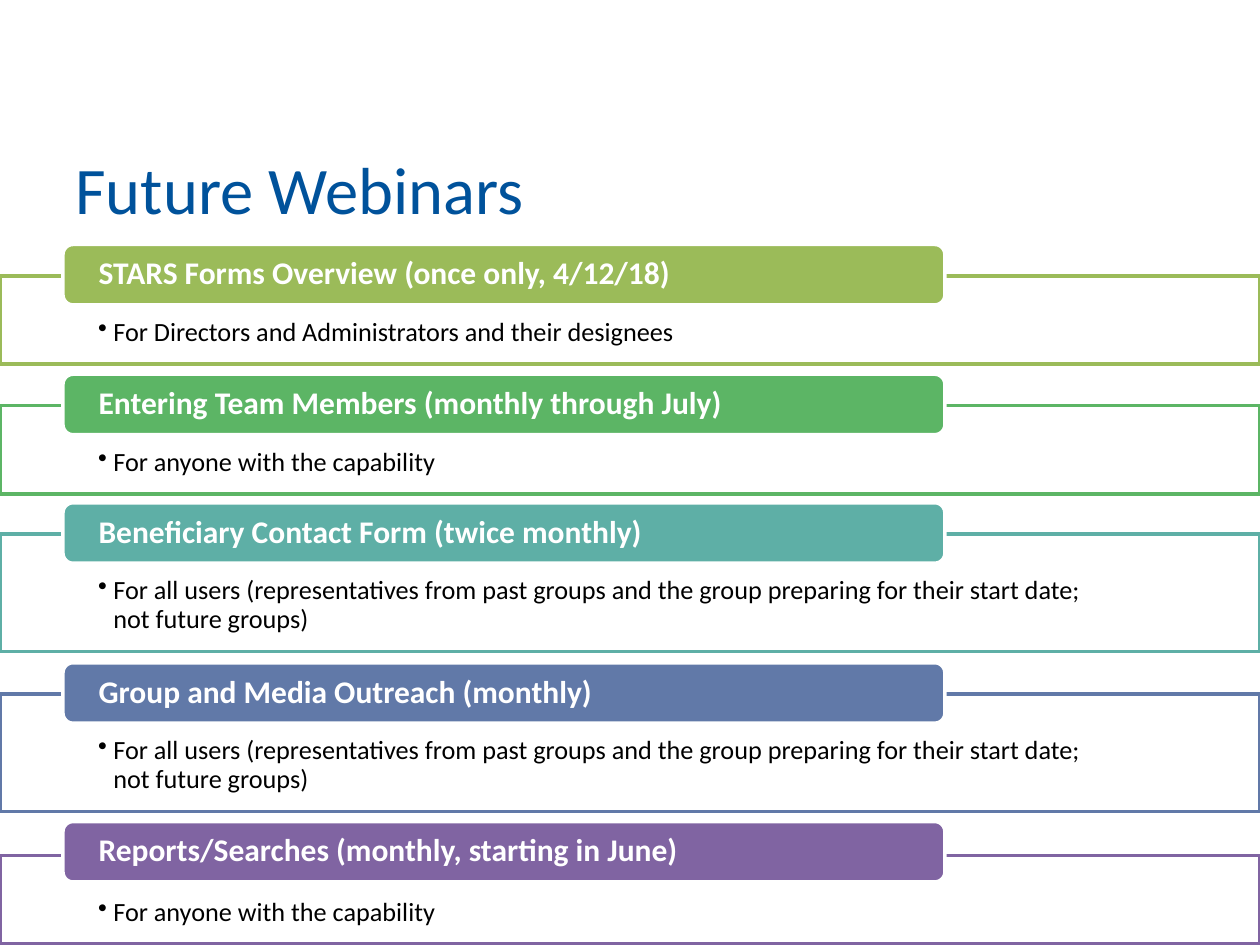
from dataclasses import dataclass

from lxml.etree import SubElement
from pptx import Presentation
from pptx.dml.color import RGBColor
from pptx.enum.shapes import MSO_SHAPE
from pptx.enum.text import MSO_ANCHOR, PP_ALIGN
from pptx.oxml.ns import qn
from pptx.shapes.autoshape import Shape
from pptx.slide import Slide
from pptx.util import Inches, Pt

COLORS = {
    "title": "00529B",
    "text": "000000",
    "white": "FFFFFF",
    "olive": "9BBB59",
    "green": "5CB565",
    "teal": "5EAFA6",
    "blue": "6179A8",
    "purple": "8064A2",
}
FONT = "Calibri"
ONE_LINE, TWO_LINES = 0.7, 0.93  # panel heights
ANYONE = "For anyone with the capability"
ALL_USERS = (
    "For all users (representatives from past groups and the group "
    "preparing for their start date; \nnot future groups)"
)


@dataclass
class Webinar:
    heading: str
    audience: str
    color: str
    top: float
    height: float = ONE_LINE
    tab_rise: float = 0.25


WEBINARS = [
    Webinar("STARS Forms Overview (once only, 4/12/18)",
            "For Directors and Administrators and their designees", "olive", 2.19),
    Webinar("Entering Team Members (monthly through July)", ANYONE, "green", 3.22),
    Webinar("Beneficiary Contact Form (twice monthly)", ALL_USERS, "teal", 4.24, TWO_LINES),
    Webinar("Group and Media Outreach (monthly)", ALL_USERS, "blue", 5.51, TWO_LINES),
    Webinar("Reports/Searches (monthly, starting in June)", ANYONE, "purple", 6.79,
            tab_rise=0.27),
]


def rgb(name: str) -> RGBColor:
    return RGBColor.from_string(COLORS[name])


def write(shape: Shape, text: str, *, size: float, color: str, bold: bool = False,
          anchor: MSO_ANCHOR = MSO_ANCHOR.MIDDLE, spacing: float = 0.9,
          insets: tuple[float, float, float, float] = (0.1, 0.05, 0.1, 0.05),
          bullet: bool = False) -> None:
    """Fill a shape with one formatted paragraph; insets are left, top, right, bottom."""
    frame = shape.text_frame
    frame.word_wrap = True
    frame.vertical_anchor = anchor
    (frame.margin_left, frame.margin_top,
     frame.margin_right, frame.margin_bottom) = map(Inches, insets)
    paragraph = frame.paragraphs[0]
    paragraph.text = text
    paragraph.alignment = PP_ALIGN.LEFT
    paragraph.line_spacing = spacing
    if bullet:
        paragraph.level = 1
        properties = paragraph._p.get_or_add_pPr()
        properties.set("marL", str(Inches(0.12)))
        properties.set("indent", str(-Inches(0.12)))
        SubElement(properties, qn("a:buChar")).set("char", "•")
    for run in paragraph.runs:
        run.font.name = FONT
        run.font.size = Pt(size)
        run.font.bold = bold
        run.font.color.rgb = rgb(color)


def add_box(slide: Slide, kind: MSO_SHAPE, left: float, top: float, width: float,
            height: float, *, fill: str, line: str) -> Shape:
    box = slide.shapes.add_shape(kind, Inches(left), Inches(top), Inches(width), Inches(height))
    box.shadow.inherit = False
    box.fill.solid()
    box.fill.fore_color.rgb = rgb(fill)
    box.line.color.rgb = rgb(line)
    box.line.width = Pt(2)
    return box


def add_webinar(slide: Slide, webinar: Webinar) -> None:
    # Outlined panel with the audience
    panel = add_box(slide, MSO_SHAPE.RECTANGLE, 0, webinar.top, 10, webinar.height,
                    fill="white", line=webinar.color)
    panel_color = panel._element.spPr.find(qn("a:solidFill"))[0]
    SubElement(panel_color, qn("a:alpha")).set("val", "90000")
    write(panel, webinar.audience, size=15, color="text", anchor=MSO_ANCHOR.TOP,
          insets=(0.78, 0.34, 0.78, 0.12), bullet=True)

    # Coloured tab with the heading
    tab = add_box(slide, MSO_SHAPE.ROUNDED_RECTANGLE, 0.5, webinar.top - webinar.tab_rise,
                  7, 0.48, fill=webinar.color, line="white")
    write(tab, webinar.heading, size=18, color="white", bold=True, insets=(0.26, 0, 0.26, 0))


def main() -> None:
    presentation = Presentation()
    presentation.slide_width = Inches(10)
    presentation.slide_height = Inches(7.5)
    slide = presentation.slides.add_slide(presentation.slide_layouts[6])

    # Title
    title = slide.shapes.add_textbox(Inches(0.5), Inches(1.16), Inches(9), Inches(0.67))
    write(title, "Future Webinars", size=38, color="title", spacing=1.0)

    # Webinar list
    for webinar in WEBINARS:
        add_webinar(slide, webinar)

    presentation.save("out.pptx")


if __name__ == "__main__":
    main()
